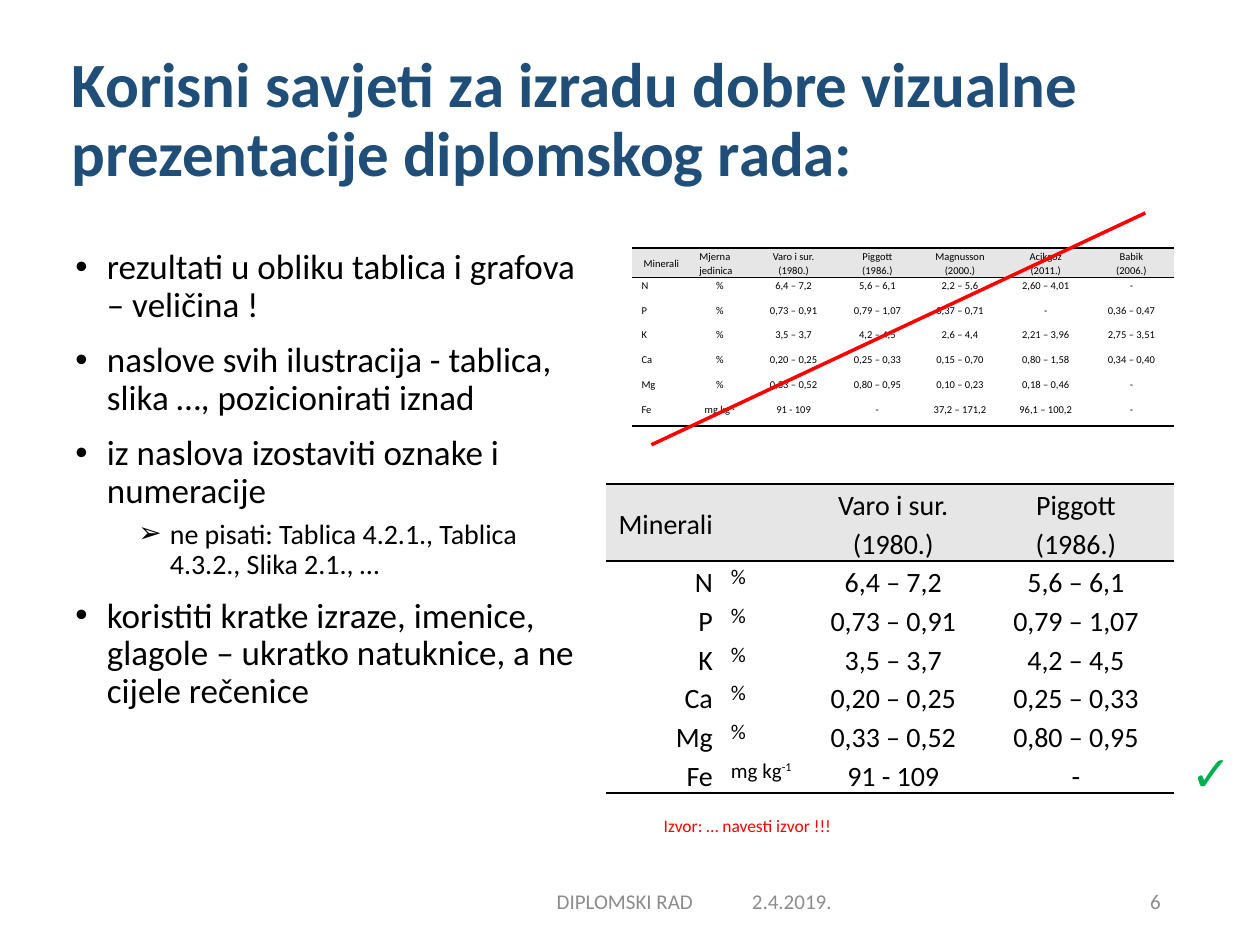
from lxml.etree import SubElement
from pptx import Presentation
from pptx.dml.color import RGBColor
from pptx.enum.shapes import MSO_CONNECTOR
from pptx.enum.text import MSO_ANCHOR, PP_ALIGN
from pptx.oxml import parse_xml
from pptx.oxml.ns import nsdecls, qn
from pptx.util import Pt

HUES = {"title": "1F4E79", "ink": "000000", "gray": "8C8C8C",
        "red": "FF0000", "green": "00B050", "head": "E6E6E6"}
ALIGN = {"l": PP_ALIGN.LEFT, "c": PP_ALIGN.CENTER, "r": PP_ALIGN.RIGHT}
MID, TOP = MSO_ANCHOR.MIDDLE, MSO_ANCHOR.TOP

TITLE = "Korisni savjeti za izradu dobre vizualne prezentacije diplomskog rada:"
MAIN = {"size": 20, "bullet": "•", "left": 18, "before": 10}
SUB = {"size": 16, "bullet": "➢", "left": 54, "before": 5, "level": 1}
TIPS = [
    ("rezultati u obliku tablica i grafova – veličina !", {**MAIN, "before": 0}),
    ("naslove svih ilustracija - tablica, slika …, pozicionirati iznad", MAIN),
    ("iz naslova izostaviti oznake i numeracije", MAIN),
    ("ne pisati: Tablica 4.2.1., Tablica 4.3.2., Slika 2.1., …", SUB),
    ("koristiti kratke izraze, imenice, glagole – ukratko natuknice, a ne cijele rečenice", MAIN),
]
NOTES = [
    ("2.4.2019.", (422.6, 500.4, 70.6, 28.8), {"size": 12, "hue": "gray", "anchor": MID}),
    ("6", (508.3, 500.4, 162, 28.8), {"size": 12, "hue": "gray", "anchor": MID, "align": "r"}),
    ("DIPLOMSKI RAD", (307.4, 500.4, 99.4, 28.8),
     {"size": 12, "hue": "gray", "anchor": MID, "align": "c"}),
    ("Izvor: … navesti izvor !!!", (372.2, 462.2, 126.7, 19.4),
     {"size": 10, "hue": "red", "anchor": MID}),
    ("✓", (673.2, 420.5, 36.7, 41),
     {"size": 28, "hue": "green", "bold": True, "wrap": False}),
]
HEAD = ["Minerali", "Mjerna\njedinica", "Varo i sur.\n(1980.)", "Piggott\n(1986.)",
        "Magnusson\n(2000.)", "Acikgoz\n(2011.)", "Babik\n(2006.)"]
ROWS = [
    ["N", "%", "6,4 – 7,2", "5,6 – 6,1", "2,2 – 5,6", "2,60 – 4,01", "-"],
    ["P", "%", "0,73 – 0,91", "0,79 – 1,07", "0,37 – 0,71", "-", "0,36 – 0,47"],
    ["K", "%", "3,5 – 3,7", "4,2 – 4,5", "2,6 – 4,4", "2,21 – 3,96", "2,75 – 3,51"],
    ["Ca", "%", "0,20 – 0,25", "0,25 – 0,33", "0,15 – 0,70", "0,80 – 1,58", "0,34 – 0,40"],
    ["Mg", "%", "0,33 – 0,52", "0,80 – 0,95", "0,10 – 0,23", "0,18 – 0,46", "-"],
    ["Fe", "mg kg^-1", "91 - 109", "-", "37,2 – 171,2", "96,1 – 100,2", "-"],
]
SMALL = {"spot": (361.4, 141.8), "cols": [33.1, 33.8, 50.4, 45.4, 49, 49, 49],
         "tall": (16.8, 14.15), "sizes": (6, 6), "head": "clccccc", "body": "lcccccc"}
LARGE = {"spot": (346.3, 276.5), "cols": [66.2, 49.7, 96.5, 112.3],
         "tall": (44.1, 22.05), "sizes": (16, 12), "head": "rlcc", "body": "rlcc"}


def write(frame, paras, **base):
    """Fill a text frame with formatted paragraphs; ^ starts a superscript."""
    frame.word_wrap = base.get("wrap", True)
    frame.vertical_anchor = base.get("anchor", TOP)
    for num, (text, own) in enumerate(paras):
        fmt = {**base, **own}
        para = frame.paragraphs[0] if num == 0 else frame.add_paragraph()
        para.level = fmt.get("level", 0)
        para.alignment = ALIGN[fmt.get("align", "l")]
        para.line_spacing = fmt.get("lead", 1.0)
        para.space_before = Pt(fmt.get("before", 0))
        if "bullet" in fmt:
            props = para._p.get_or_add_pPr()
            props.set("marL", str(Pt(fmt["left"])))
            props.set("indent", str(-Pt(18)))
            SubElement(props, qn("a:buFont")).set("typeface", "Arial")
            SubElement(props, qn("a:buChar")).set("char", fmt["bullet"])
        for pos, part in enumerate(text.split("^")):
            run = para.add_run()
            run.text = part
            run.font.name = "Calibri"
            run.font.size = Pt(fmt["size"])
            run.font.bold = fmt.get("bold", False)
            run.font.color.rgb = RGBColor.from_string(HUES[fmt.get("hue", "ink")])
            if pos:
                run._r.get_or_add_rPr().set("baseline", "30000")


def edge(cell, shown):
    """Set the four borders of a cell, drawing only the shown sides."""
    props = cell._tc.get_or_add_tcPr()
    for pos, side in enumerate("LRTB"):
        paint = "<a:noFill/>"
        if side in shown:
            paint = f'<a:solidFill><a:srgbClr val="{HUES["ink"]}"/></a:solidFill>'
        props.insert(pos, parse_xml(
            f'<a:ln{side} {nsdecls("a")} w="{Pt(1)}">{paint}</a:ln{side}>'))


def grid(slide, plan):
    """Add a table of minerals laid out by its plan."""
    cols, (first, rest) = plan["cols"], plan["tall"]
    data = [HEAD] + ROWS
    last = len(data) - 1
    box = (*plan["spot"], sum(cols), first + rest * last)
    table = slide.shapes.add_table(len(data), len(cols), *map(Pt, box)).table
    table.first_row = table.horz_banding = False
    for col, wide in zip(table.columns, cols):
        col.width = Pt(wide)
    for r, line in enumerate(data):
        table.rows[r].height = Pt(rest if r else first)
        for c in range(len(cols)):
            cell = table.cell(r, c)
            cell.margin_left = cell.margin_right = Pt(5.2)
            cell.margin_top = cell.margin_bottom = 0
            if r == 0:
                cell.fill.solid()
                cell.fill.fore_color.rgb = RGBColor.from_string(HUES["head"])
            else:
                cell.fill.background()
            edge(cell, {0: "TB", 1: "T", last: "B"}.get(r, ""))
            if plan is LARGE and (r, c) == (0, 1):
                continue
            write(cell.text_frame, [(text, {}) for text in line[c].split("\n")],
                  size=plan["sizes"][c == 1], lead=1.15,
                  align=plan["body" if r else "head"][c])
            cell.vertical_anchor = MID if r == c == 0 else TOP


def place(slide, box, paras, **fmt):
    """Add a text box and write into it."""
    write(slide.shapes.add_textbox(*map(Pt, box)).text_frame, paras, **fmt)


def main():
    """Build the slide and save it."""
    deck = Presentation()
    deck.slide_width, deck.slide_height = Pt(720), Pt(540)
    slide = deck.slides.add_slide(deck.slide_layouts[5])
    title = slide.shapes.title
    title.left, title.top, title.width, title.height = map(Pt, (33.8, 17.3, 648.7, 104.4))
    write(title.text_frame, [(TITLE, {})], size=36, bold=True, hue="title",
          lead=0.9, anchor=MID)
    place(slide, (36, 139, 306, 342.7), TIPS, lead=0.9)
    for text, box, fmt in NOTES:
        place(slide, box, [(text, {})], **fmt)
    for plan in (SMALL, LARGE):
        grid(slide, plan)
    strike = slide.shapes.add_connector(
        MSO_CONNECTOR.STRAIGHT, *map(Pt, (372.2, 254.2, 654.5, 121.7)))
    strike.line.color.rgb = RGBColor.from_string(HUES["red"])
    strike.line.width = Pt(2)
    SubElement(strike._element.spPr, qn("a:effectLst"))
    deck.save("out.pptx")


if __name__ == "__main__":
    main()
